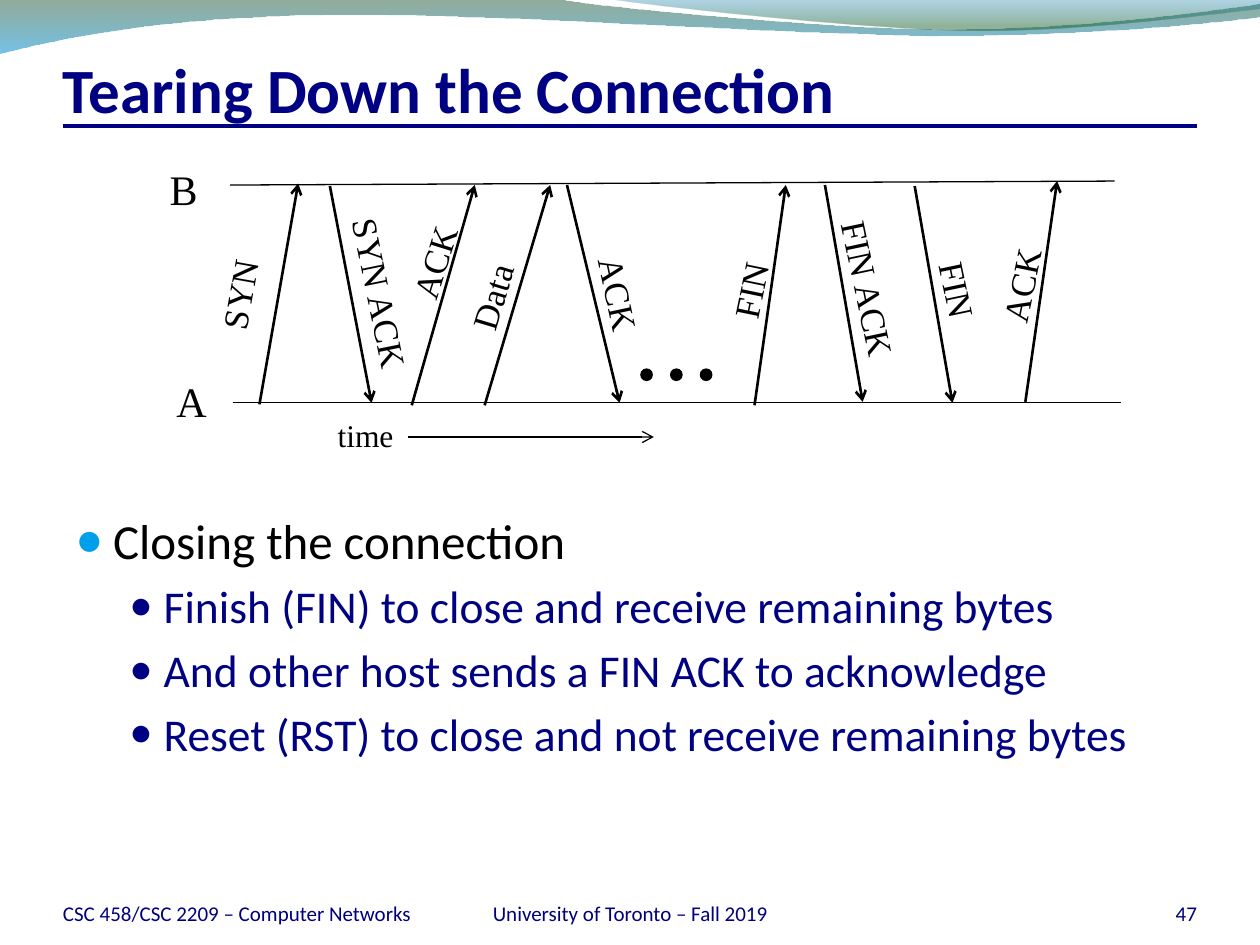
from itertools import chain

from lxml import etree
from pptx import Presentation
from pptx.dml.color import RGBColor
from pptx.enum.shapes import MSO_CONNECTOR, MSO_SHAPE
from pptx.enum.text import MSO_ANCHOR, MSO_AUTO_SIZE, PP_ALIGN
from pptx.oxml.ns import qn
from pptx.util import Cm, Pt

STRAIGHT = MSO_CONNECTOR.STRAIGHT
ELLIPSE = MSO_SHAPE.OVAL
TOP, MIDDLE, BOTTOM = MSO_ANCHOR.TOP, MSO_ANCHOR.MIDDLE, MSO_ANCHOR.BOTTOM
FIT_SHAPE = MSO_AUTO_SIZE.SHAPE_TO_FIT_TEXT
LEFT, CENTER, RIGHT = PP_ALIGN.LEFT, PP_ALIGN.CENTER, PP_ALIGN.RIGHT
SANS, SERIF = "Calibri", "Times New Roman"
BLACK, NAVY, FOOTER_NAVY, SKY = "000000", "000082", "00007C", "009FEC"

LOWER_WAVE = [
    [(0, -0.03)],
    [(11.18, -0.03)],
    [(12.09, 0.15), (16.87, 0.58), (19.25, 0.58)],
    [(21.67, 0.58), (24.33, 0.23), (25.4, 0.08)],
    [(25.43, 0.33)],
    [(24.97, 0.41), (22.1, 0.71), (18.95, 0.71)],
    [(15.8, 0.69), (9.7, 0.25), (6.53, 0.3)],
    [(3.28, 0.33), (1.17, 0.76), (-0.03, 1.07)],
]
UPPER_WAVE = [
    [(12.17, -0.03)],
    [(12.93, 0.1), (17.32, 0.58), (19.53, 0.61)],
    [(21.74, 0.64), (24.41, 0.28), (25.4, 0.18)],
    [(25.4, -0.03)],
]
MESSAGES = [
    ("SYN", (2.06, 4.98), (2.84, 0.53), (1.65, 2.76), 1.93, 280.1),
    ("SYN ACK", (3.48, 0.58), (4.32, 4.95), (4.5, 2.74), 3.61, 78.5),
    ("ACK", (5.13, 5), (6.4, 0.56), (5.58, 2.12), 2.01, 287.4),
    ("Data", (6.6, 5), (7.92, 0.56), (6.74, 2.81), 1.85, 286.7),
    ("ACK", (8.26, 0.56), (9.32, 4.95), (9.31, 2.76), 2.01, 77.9),
    ("FIN", (12.04, 5), (12.67, 0.56), (11.95, 2.68), 1.65, 281.6),
    ("FIN ACK", (13.46, 0.56), (14.22, 4.93), (14.34, 2.65), 3.33, 78.1),
    ("FIN", (15.27, 0.58), (16.03, 4.95), (16.14, 2.68), 1.65, 78.1),
    ("ACK", (17.5, 4.93), (18.14, 0.48), (17.41, 2.58), 2.01, 281.6),
]
CLOSING_STEPS = [
    "Finish (FIN) to close and receive remaining bytes",
    "And other host sends a FIN ACK to acknowledge",
    "Reset (RST) to close and not receive remaining bytes",
]


def color(code):
    return RGBColor.from_string(code)


def add_span(para, text, size, code, font=SANS, bold=False):
    span = para.add_run()
    span.text = text
    span.font.name = font
    span.font.size = Pt(size)
    span.font.bold = bold
    span.font.color.rgb = color(code)


def add_frame(page, left, top, width, height, anchor, insets=(0, 0, 0, 0)):
    box = page.shapes.add_textbox(Cm(left), Cm(top), Cm(width), Cm(height))
    frame = box.text_frame
    frame.word_wrap = True
    frame.vertical_anchor = anchor
    frame.margin_left, frame.margin_top, frame.margin_right, frame.margin_bottom = map(Cm, insets)
    return box


def add_label(page, text, center, width, height, size, rotation=0):
    x, y = center
    box = add_frame(page, x - width / 2, y - height / 2, width, height, MIDDLE, (0.25, 0.13, 0.25, 0.13))
    box.rotation = rotation
    box.text_frame.word_wrap = False
    box.text_frame.auto_size = FIT_SHAPE
    para = box.text_frame.paragraphs[0]
    para.alignment = CENTER
    add_span(para, text, size, BLACK, SERIF)


def add_line(page, start, end, weight, code=BLACK, arrow=False):
    line = page.shapes.add_connector(STRAIGHT, *map(Cm, start + end))
    line.line.color.rgb = color(code)
    line.line.width = Pt(weight)
    if arrow:
        etree.SubElement(line.line._get_or_add_ln(), qn("a:tailEnd"), type="arrow")
    etree.SubElement(line._element.spPr, qn("a:effectLst"))


def bend_segments(wave, segments):
    nodes = iter(list(wave._element.iter(qn("a:lnTo"))))
    for segment in segments:
        group = [next(nodes) for _ in segment]
        if len(group) == 3:
            curve = etree.Element(qn("a:cubicBezTo"))
            group[0].addprevious(curve)
            for node in group:
                curve.append(node[0])
                node.getparent().remove(node)


def add_wave(page, segments, stops):
    outline = [(Cm(x), Cm(y)) for x, y in chain.from_iterable(segments)]
    builder = page.shapes.build_freeform(*outline[0])
    builder.add_line_segments(outline[1:], close=True)
    wave = builder.convert_to_shape()
    bend_segments(wave, segments[1:])
    wave.shadow.inherit = False
    wave.line.fill.background()
    wave.fill.gradient()
    wave.fill.gradient_angle = 270
    for stop, (position, code, opacity) in zip(wave.fill.gradient_stops, stops):
        stop.position = position
        stop.color.rgb = color(code)
        tint = stop._gs.find(qn("a:srgbClr"))
        etree.SubElement(tint, qn("a:alpha"), val=str(opacity * 1000))


def add_header(page, left, top, width, height):
    add_wave(page, LOWER_WAVE, [(0, "0F461E", 45), (1, "0090D6", 55)])
    add_wave(page, UPPER_WAVE, [(0, "0076AF", 30), (0.8, "0D5821", 45)])
    add_line(page, (left, top + height), (left + width, top + height), 2.25, NAVY)
    box = add_frame(page, left, top, width, height, BOTTOM, (0, 0.13, 0, 0))
    add_span(box.text_frame.paragraphs[0], "Tearing Down the Connection", 36, NAVY, bold=True)


def add_timeline(page, left, top):
    def at(point):
        return left + point[0], top + point[1]

    for text, start, end, center, width, rotation in MESSAGES:
        add_line(page, at(start), at(end), 1.5, arrow=True)
        add_label(page, text, at(center), width, 1.09, 20, rotation)
    add_line(page, at((1.47, 0.56)), at((19.3, 0.48)), 0.75)
    add_line(page, at((1.52, 4.95)), at((19.43, 4.95)), 0.75)
    add_line(page, at((5.05, 5.64)), at((10.01, 5.64)), 0.75, arrow=True)
    add_label(page, "time", at((4.2, 5.59)), 1.65, 1.02, 18)
    add_label(page, "A", at((0.69, 4.9)), 1.12, 1.27, 24)
    add_label(page, "B", at((0.53, 0.64)), 1.07, 1.27, 24)
    for index in range(3):
        x, y = at((9.75 + index * 0.6, 4.27))
        dot = page.shapes.add_shape(ELLIPSE, Cm(x), Cm(y), Cm(0.23), Cm(0.23))
        dot.shadow.inherit = False
        dot.fill.solid()
        dot.fill.fore_color.rgb = color(BLACK)
        dot.line.color.rgb = color(BLACK)
        dot.line.width = Pt(0.75)


def add_bullet(para, text, size, code, level, margin, indent, bullet_code, bullet_size):
    para.level = level
    para.space_before = Pt(size * 0.2)
    add_span(para, text, size, code)
    props = para._p.get_or_add_pPr()
    props.set("marL", str(Cm(margin)))
    props.set("indent", str(-Cm(indent)))
    tint = etree.SubElement(props, qn("a:buClr"))
    etree.SubElement(tint, qn("a:srgbClr"), val=bullet_code)
    etree.SubElement(props, qn("a:buSzPct"), val=str(bullet_size * 1000))
    etree.SubElement(props, qn("a:buFont"), typeface=SERIF)
    etree.SubElement(props, qn("a:buChar"), char="●")


def add_body(page, left, top, width, height):
    frame = add_frame(page, left, top, width, height, TOP, (0.25, 0.13, 0.25, 0.13)).text_frame
    add_bullet(frame.paragraphs[0], "Closing the connection", 28, BLACK, 0, 0.76, 0.76, SKY, 95)
    for text in CLOSING_STEPS:
        add_bullet(frame.add_paragraph(), text, 26, NAVY, 1, 1.78, 0.69, NAVY, 85)


def add_footer(page, left, top, width, height):
    parts = [
        ("CSC 458/CSC 2209 – Computer Networks", 0, 7.2, LEFT),
        ("University of Toronto – Fall 2019", 7.41, 8.05, CENTER),
        ("47", width - 2.12, 2.12, RIGHT),
    ]
    for text, offset, part_width, alignment in parts:
        box = add_frame(page, left + offset, top, part_width, height, BOTTOM)
        para = box.text_frame.paragraphs[0]
        para.alignment = alignment
        add_span(para, text, 12, FOOTER_NAVY)


def main():
    deck = Presentation()
    deck.slide_width, deck.slide_height = Cm(25.4), Cm(19.05)
    page = deck.slides.add_slide(deck.slide_layouts[6])
    add_header(page, 1.27, 0.84, 22.86, 1.7)
    add_body(page, 1.27, 10.16, 22.86, 7.42)
    add_footer(page, 1.27, 17.65, 22.86, 1.02)
    add_timeline(page, 3.17, 3.17)
    deck.save("out.pptx")


if __name__ == "__main__":
    main()
